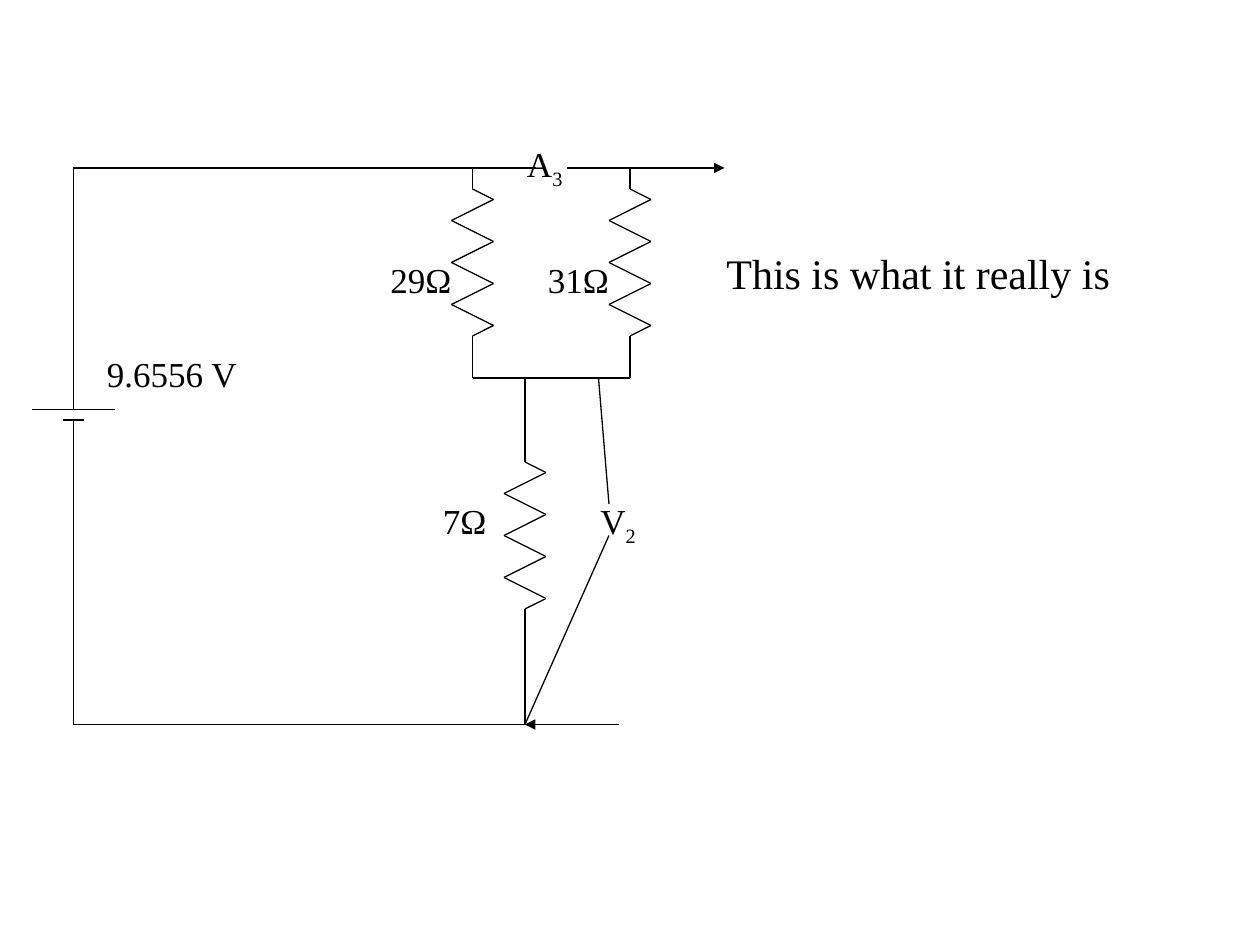
"""Build a slide with a battery driving a parallel pair of resistors in series with a third."""
import itertools

import lxml.etree
import pptx
import pptx.dml.color
import pptx.enum.shapes
import pptx.enum.text
import pptx.oxml.ns
import pptx.util

Pt = pptx.util.Pt
FONT = "Times New Roman"
INK = "000000"


def color(value):
    """Return the colour for a hex string."""
    return pptx.dml.color.RGBColor.from_string(value)


def add_wire(slide, start, end, arrow=False):
    """Draw a straight wire, with an arrowhead at its end if asked."""
    connector = slide.shapes.add_connector(
        pptx.enum.shapes.MSO_CONNECTOR.STRAIGHT, *map(Pt, start + end))
    connector.line.width = Pt(0.75)
    connector.line.color.rgb = color(INK)
    qualified = pptx.oxml.ns.qn
    if arrow:
        lxml.etree.SubElement(connector.line._get_or_add_ln(), qualified("a:tailEnd"), type="triangle")
    lxml.etree.SubElement(connector._element.spPr, qualified("a:effectLst"))


def add_path(slide, points):
    """Draw wires through the points in turn."""
    for start, end in itertools.pairwise(points):
        add_wire(slide, start, end)


def add_label(slide, left, top, width, height, text, subscript="", size=20, wrap=False):
    """Write a label in its box, with an optional subscript."""
    box = slide.shapes.add_textbox(Pt(left), Pt(top), Pt(width), Pt(height))
    frame = box.text_frame
    frame.word_wrap = wrap
    frame.auto_size = pptx.enum.text.MSO_AUTO_SIZE.SHAPE_TO_FIT_TEXT
    paragraph = frame.paragraphs[0]
    paragraph.font.name = FONT
    paragraph.font.size = Pt(size)
    paragraph.font.color.rgb = color(INK)
    paragraph.add_run().text = text
    if subscript:
        run = paragraph.add_run()
        run.text = subscript
        run._r.get_or_add_rPr().set("baseline", "-25000")


def add_resistor(slide, left, top, width, height):
    """Draw a zigzag resistor that fills the box."""
    step = height / 14
    middle = left + width / 2
    turns = [(left + width * (1 - index % 2), top + step * (1 + 2 * index)) for index in range(7)]
    add_path(slide, [(middle, top), *turns, (middle, top + height)])


def add_battery(slide, left, top, width, height):
    """Draw the long and short plates of a battery with its voltage."""
    add_wire(slide, (left, top), (left + width, top))
    add_wire(slide, (left + width * 3 / 8, top + height), (left + width * 5 / 8, top + height))
    add_label(slide, left + 36, top - 36, 89.3, 31, "9.6556 V")


def add_supply(slide, left, top, width, height):
    """Draw the supply side: battery, top and bottom wires and current arrows."""
    bottom = top + height
    right = left + width
    add_battery(slide, left - 24, top + 138, 48, 6)
    add_path(slide, [(left, top + 138), (left, top), (left + 264, top)])
    add_path(slide, [(left, top + 144), (left, bottom), (right, bottom)])
    add_wire(slide, (left + 318, top), (left + 282, top))
    add_wire(slide, (left + 318, top), (left + 372, top), arrow=True)
    add_wire(slide, (right + 54, bottom), (right, bottom), arrow=True)
    add_label(slide, right - 6, top - 18, 35.3, 31, "A", "3")


def add_parallel_pair(slide, left, top, width, height):
    """Draw two resistors side by side between the top wire and a joining wire."""
    bottom = top + height
    for x, value in ((left, "29Ω"), (left + width, "31Ω")):
        add_wire(slide, (x, top), (x, top + 12))
        add_resistor(slide, x - 12, top + 12, 24, 84)
        add_wire(slide, (x, top + 96), (x, bottom))
        add_label(slide, x - 54, top + 48, 49.7, 31, value)
    add_wire(slide, (left, bottom), (left + width, bottom))


def add_series_branch(slide, left, top, width, height):
    """Draw the series resistor down the left side and the voltmeter on the right."""
    bottom = top + height
    add_wire(slide, (left, top), (left, top + 48))
    add_resistor(slide, left - 12, top + 48, 24, 84)
    add_wire(slide, (left, top + 132), (left, bottom))
    add_label(slide, left - 54, top + 66, 39.6, 31, "7Ω")
    add_wire(slide, (left + width - 6, top), (left + width, top + 72))
    add_wire(slide, (left + width, top + 90), (left, bottom))
    add_label(slide, left + width - 12, top + 66, 35.3, 31, "V", "2")


def main():
    """Build and save the slide."""
    presentation = pptx.Presentation()
    presentation.slide_width, presentation.slide_height = Pt(720), Pt(540)
    slide = presentation.slides.add_slide(presentation.slide_layouts[6])
    add_supply(slide, 42, 96, 258, 318)
    add_parallel_pair(slide, 270, 96, 90, 120)
    add_series_branch(slide, 300, 216, 48, 198)
    add_label(slide, 408, 138, 336, 36, "This is what it really is", size=24, wrap=True)
    presentation.save("out.pptx")


if __name__ == "__main__":
    main()
